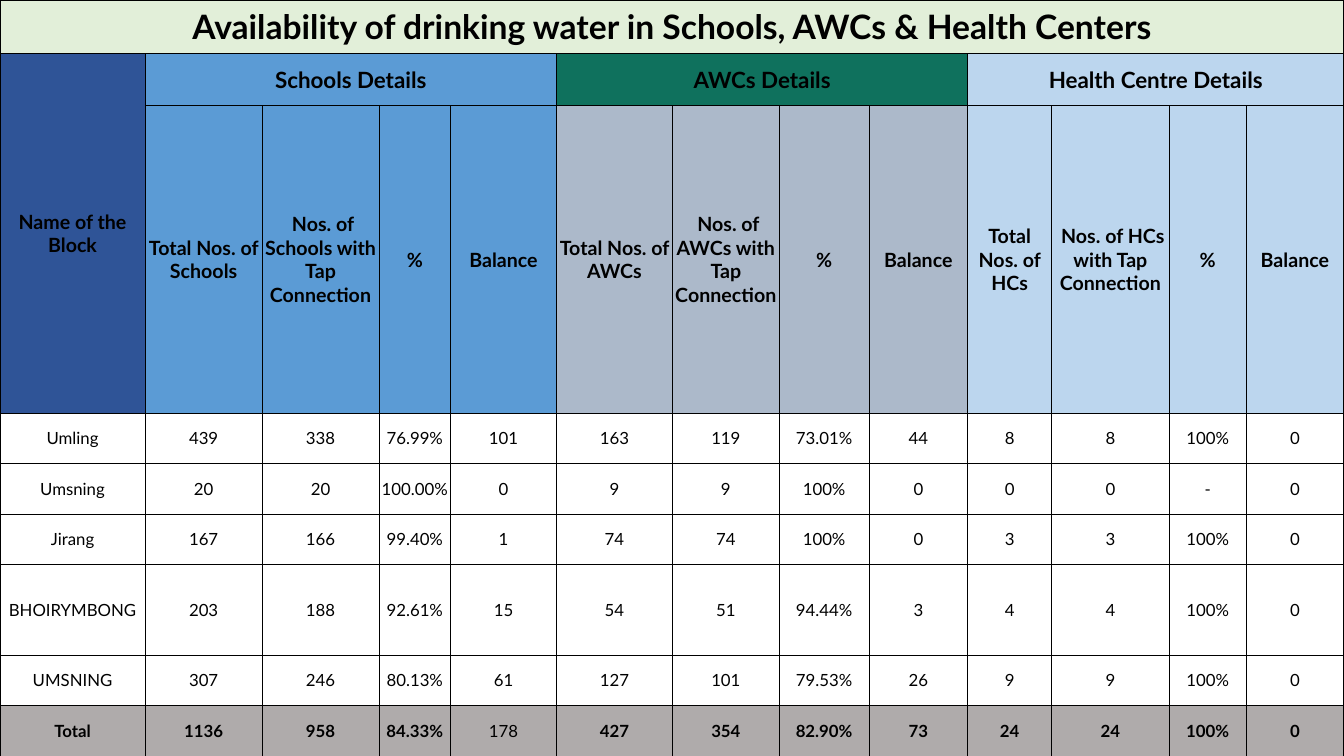
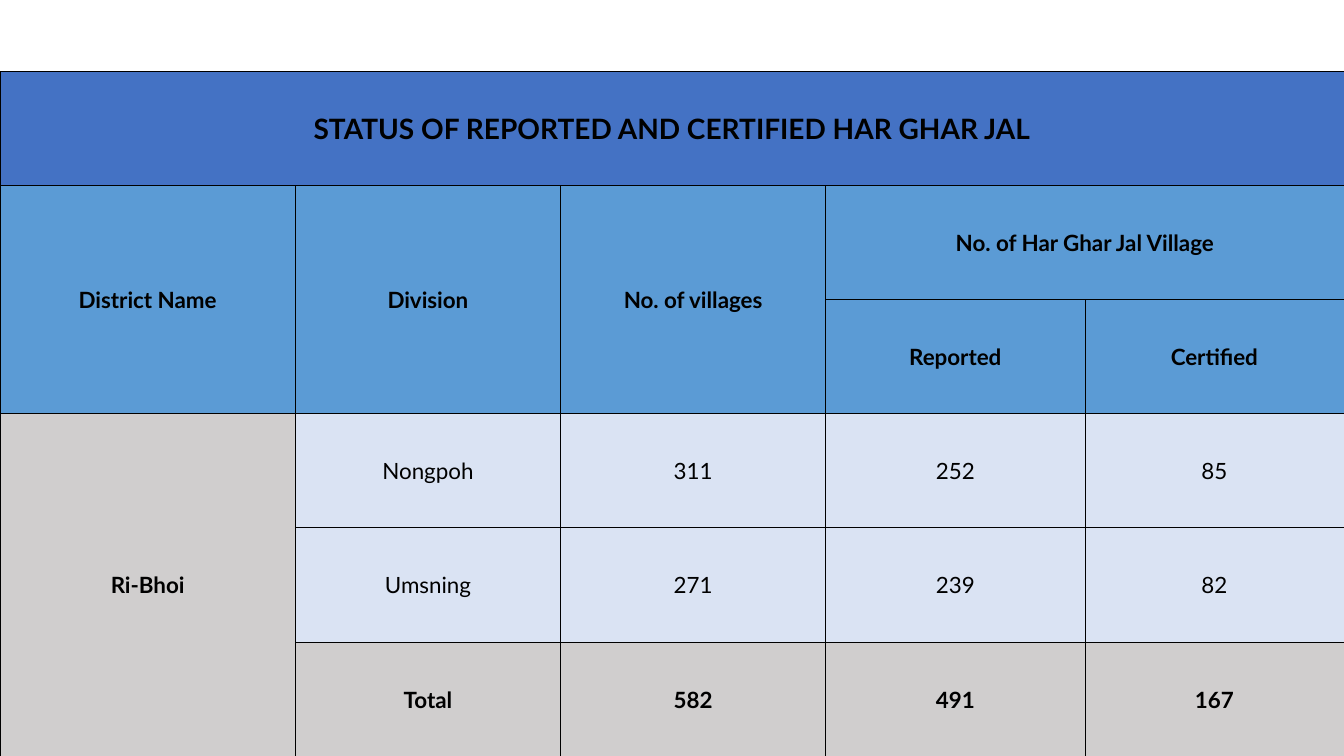
from lxml import etree
from pptx import Presentation
from pptx.dml.color import RGBColor
from pptx.enum.text import MSO_ANCHOR, PP_ALIGN
from pptx.oxml.ns import qn
from pptx.util import Inches, Pt

MIDDLE, CENTER = MSO_ANCHOR.MIDDLE, PP_ALIGN.CENTER
FONT = "Lato"
SLIDE_WIDTH, SLIDE_HEIGHT = 13.33, 7.5
BORDER_WIDTH = Pt(0.5)

BLACK = RGBColor(0x00, 0x00, 0x00)
PALE_GREEN = RGBColor(0xE2, 0xEF, 0xD9)
NAVY = RGBColor(0x2F, 0x54, 0x97)
BLUE = RGBColor(0x5B, 0x9B, 0xD5)
ROYAL_BLUE = RGBColor(0x44, 0x72, 0xC4)
GREEN = RGBColor(0x0F, 0x71, 0x5D)
SLATE = RGBColor(0xAC, 0xB9, 0xCA)
SKY = RGBColor(0xBC, 0xD6, 0xEE)
PALE_BLUE = RGBColor(0xDA, 0xE3, 0xF3)
GRAY = RGBColor(0xAF, 0xAB, 0xAB)
LIGHT_GRAY = RGBColor(0xD0, 0xCE, 0xCE)

# Water availability: one group of four columns per kind of institution
WATER_TITLE = "Availability of drinking water in Schools, AWCs & Health Centers"
WATER_GROUPS = [
    # heading, short name, heading fill, column fill
    ("Schools Details", "Schools", BLUE, BLUE),
    ("AWCs Details", "AWCs", GREEN, SLATE),
    ("Health Centre Details", "HCs", SKY, SKY),
]
GROUP_SIZE = 4
WATER_ROWS = [
    ("Umling", "439", "338", "76.99%", "101", "163", "119", "73.01%", "44", "8", "8", "100%", "0"),
    ("Umsning", "20", "20", "100.00%", "0", "9", "9", "100%", "0", "0", "0", "-", "0"),
    ("Jirang", "167", "166", "99.40%", "1", "74", "74", "100%", "0", "3", "3", "100%", "0"),
    ("BHOIRYMBONG", "203", "188", "92.61%", "15", "54", "51", "94.44%", "3", "4", "4", "100%", "0"),
    ("UMSNING", "307", "246", "80.13%", "61", "127", "101", "79.53%", "26", "9", "9", "100%", "0"),
    ("Total", "1136", "958", "84.33%", "178", "427", "354", "82.90%", "73", "24", "24", "100%", "0"),
]
WATER_WIDTHS = [1.44, 1.16, 1.16, 0.71, 1.05, 1.15, 1.06, 0.89, 0.98, 0.83, 1.17, 0.76, 0.97]
WATER_HEIGHTS = [0.53, 0.52, 3.05, 0.5, 0.5, 0.5, 0.9, 0.5, 0.5]

# Village status: None marks a cell covered by a merged neighbour
STATUS_ROWS = [
    ("STATUS OF REPORTED AND CERTIFIED HAR GHAR JAL", None, None, None, None),
    ("District Name", "Division", "No. of villages", "No. of Har Ghar Jal Village", None),
    (None, None, None, "Reported", "Certified"),
    ("Ri-Bhoi", "Nongpoh", "311", "252", "85"),
    (None, "Umsning", "271", "239", "82"),
    (None, "Total", "582", "491", "167"),
]
STATUS_WIDTHS = [2.93, 2.63, 2.63, 2.57, 2.57]
STATUS_TOP = 0.71


def add_borders(cell):
    properties = cell._tc.get_or_add_tcPr()
    for side in ("a:lnL", "a:lnR", "a:lnT", "a:lnB"):
        line = etree.SubElement(properties, qn(side), w=str(BORDER_WIDTH))
        fill = etree.SubElement(line, qn("a:solidFill"))
        etree.SubElement(fill, qn("a:srgbClr"), val=str(BLACK))


def format_cell(cell, text, size, bold, color, cell_format):
    for name, value in cell_format.items():
        setattr(cell, name, value)
    add_borders(cell)
    if color is None:
        cell.fill.background()
    else:
        cell.fill.solid()
        cell.fill.fore_color.rgb = color
    para = cell.text_frame.paragraphs[0]
    para.alignment = CENTER
    para.font.size = Pt(size)
    if text:
        span = para.add_run()
        span.text = text
        for name, value in {"name": FONT, "size": Pt(size), "bold": bold}.items():
            setattr(span.font, name, value)
        span.font.color.rgb = BLACK


def add_grid(deck, rows, style, merges, widths, heights, top=0, margin=0):
    """style(row, column) gives text size, bold and fill;
    merges lists (row, column, rows spanned, columns spanned)."""
    page = deck.slides.add_slide(deck.slide_layouts[6])
    frame = page.shapes.add_table(
        len(rows), len(widths), Inches(0), Inches(top),
        Inches(sum(widths)), Inches(sum(heights)))
    table = frame.table
    table.first_row = table.horz_banding = False
    for column, width in zip(table.columns, widths):
        column.width = Inches(width)
    for row, height in zip(table.rows, heights):
        row.height = Inches(height)
    cell_format = {
        "vertical_anchor": MIDDLE, "margin_left": Inches(margin),
        "margin_right": Inches(margin), "margin_top": Inches(margin),
        "margin_bottom": 0,
    }
    for r, texts in enumerate(rows):
        for c, text in enumerate(texts):
            format_cell(table.cell(r, c), text, *style(r, c), cell_format)
    for r, c, height, width in merges:
        table.cell(r, c).merge(table.cell(r + height - 1, c + width - 1))


def water_style(row, column):
    if row == 0:
        return 24, True, PALE_GREEN
    if row <= 2:
        if column == 0:
            return 14, True, NAVY
        group = WATER_GROUPS[(column - 1) // GROUP_SIZE]
        return (16, True, group[2]) if row == 1 else (14, True, group[3])
    if row == len(WATER_HEIGHTS) - 1:
        return 12, column != 4, GRAY  # the schools balance stays regular
    return 12, False, None


def status_style(row, column):
    if row == 0:
        return 20, True, ROYAL_BLUE
    if row <= 2:
        return 16, True, BLUE
    if column == 0 or row == len(STATUS_ROWS) - 1:
        return 16, True, LIGHT_GRAY
    return 16, False, PALE_BLUE


def add_water_page(deck):
    headings, labels = ["Name of the Block"], [None]
    merges = [(0, 0, 1, len(WATER_WIDTHS)), (1, 0, 2, 1)]
    for heading, name, *_ in WATER_GROUPS:
        merges.append((1, len(headings), 1, GROUP_SIZE))
        headings += [heading] + [None] * (GROUP_SIZE - 1)
        labels += [f"Total Nos. of {name}", f" Nos. of {name} with Tap Connection", "%", "Balance"]
    title = [WATER_TITLE] + [None] * (len(WATER_WIDTHS) - 1)
    add_grid(deck, [title, headings, labels, *WATER_ROWS], water_style, merges,
             WATER_WIDTHS, WATER_HEIGHTS)


def add_status_page(deck):
    count = len(STATUS_ROWS)
    heights = [(SLIDE_HEIGHT - STATUS_TOP) / count] * count
    merges = [(0, 0, 1, 5), (1, 3, 1, 2), (3, 0, 3, 1)]
    merges += [(1, column, 2, 1) for column in range(3)]
    add_grid(deck, STATUS_ROWS, status_style, merges, STATUS_WIDTHS, heights,
             top=STATUS_TOP, margin=0.01)


def main():
    deck = Presentation()
    deck.slide_width, deck.slide_height = Inches(SLIDE_WIDTH), Inches(SLIDE_HEIGHT)
    add_water_page(deck)
    add_status_page(deck)
    deck.save("out.pptx")


if __name__ == "__main__":
    main()
